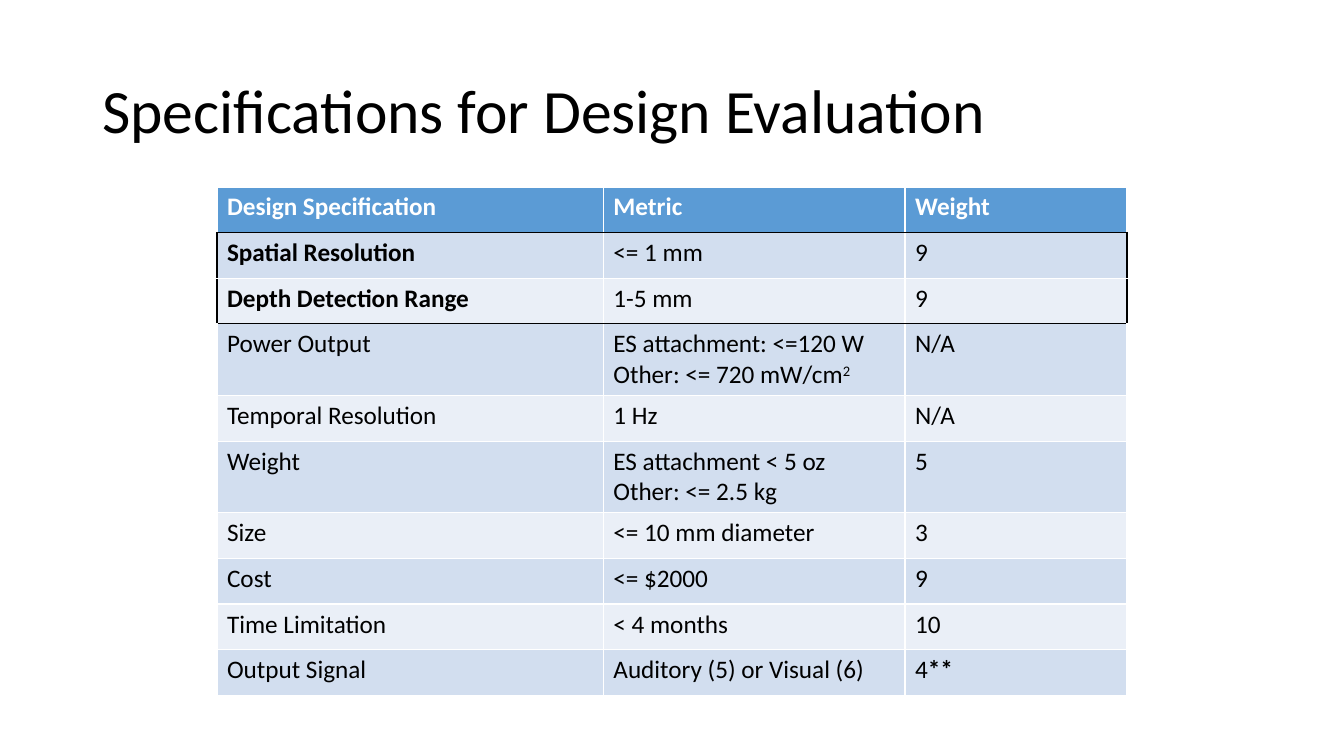
from lxml.etree import SubElement
from pptx import Presentation
from pptx.dml.color import RGBColor
from pptx.enum.text import MSO_ANCHOR
from pptx.oxml.ns import qn
from pptx.util import Pt

TITLE = "Specifications for Design Evaluation"
HEADER = ("Design Specification", "Metric", "Weight")
# A cell is a tuple of lines, a line is a tuple of (text, style) runs;
# a plain string stands for one line of one plain run.
ROWS = [
    (((("Spatial Resolution", "bold"),),), "<= 1 mm", "9"),
    (((("Depth Detection Range", "bold"),),), "1-5 mm", "9"),
    ("Power Output",
     ("ES attachment: <=120 W", (("Other: <= 720 mW/cm", ""), ("2", "super"))),
     "N/A"),
    ("Temporal Resolution", "1 Hz", "N/A"),
    ("Weight", ("ES attachment < 5 oz", "Other: <= 2.5 kg"), "5"),
    ("Size", "<= 10 mm diameter", "3"),
    ("Cost", "<= $2000", "9"),
    ("Time Limitation", "< 4 months", "10"),
    ("Output Signal", "Auditory (5) or Visual (6)", ((("4", ""), ("**", "bold")),)),
]
BOXED_ROWS = (1, 2)  # first and last table row inside the black outline

THEME = {
    "font": "Calibri", "title_size": 44, "cell_size": 18,
    "text": "000000", "header_text": "FFFFFF", "header_fill": "5B9BD5",
    "bands": ("D2DEEF", "EAEFF7"), "grid": "FFFFFF", "outline": "000000",
}
SLIDE_SIZE = (960, 540)
TITLE_BOX = (66, 28.8, 828, 104.4)
TABLE_LEFT, TABLE_TOP = 155, 133.5
COLUMN_WIDTHS = (276, 215.5, 158.5)
ROW_HEIGHT, LINE_HEIGHT = 32.6, 18.6


def add_run(p, text, size, color, style=""):
    r = p.add_run()
    r.text = text
    r.font.name = THEME["font"]
    r.font.size = Pt(size)
    r.font.bold = style == "bold"
    r.font.color.rgb = RGBColor.from_string(color)
    if style == "super":
        r.font._element.set("baseline", "30000")


def fill_cell(cell, content, fill, color, style=""):
    cell.fill.solid()
    cell.fill.fore_color.rgb = RGBColor.from_string(fill)
    tf = cell.text_frame
    lines = (content,) if isinstance(content, str) else content
    for i, line in enumerate(lines):
        p = tf.add_paragraph() if i else tf.paragraphs[0]
        runs = ((line, style),) if isinstance(line, str) else line
        for text, run_style in runs:
            add_run(p, text, THEME["cell_size"], color, run_style)


def set_borders(cell, row, col):
    """Draw the white grid, with a black outline around the boxed rows."""
    first, last = BOXED_ROWS
    boxed = first <= row <= last
    black = {
        "lnL": boxed and col == 0,
        "lnR": boxed and col == len(HEADER) - 1,
        "lnT": row in (first, last + 1),
        "lnB": row in (first - 1, last),
    }
    tcPr = cell._tc.get_or_add_tcPr()
    for i, (side, is_black) in enumerate(black.items()):
        ln = tcPr.makeelement(qn(f"a:{side}"), {"w": str(Pt(1))})
        solid = SubElement(ln, qn("a:solidFill"))
        color = THEME["outline" if is_black else "grid"]
        SubElement(solid, qn("a:srgbClr"), val=color)
        tcPr.insert(i, ln)


def line_count(row):
    return max(1 if isinstance(c, str) else len(c) for c in row)


def add_title(s):
    tf = s.shapes.add_textbox(*map(Pt, TITLE_BOX)).text_frame
    tf.word_wrap = True
    tf.vertical_anchor = MSO_ANCHOR.MIDDLE
    p = tf.paragraphs[0]
    p.line_spacing = 0.9
    add_run(p, TITLE, THEME["title_size"], THEME["text"])


def add_spec_table(s):
    rows = [HEADER, *ROWS]
    heights = [ROW_HEIGHT + LINE_HEIGHT * (line_count(row) - 1) for row in rows]
    table = s.shapes.add_table(
        len(rows), len(HEADER), Pt(TABLE_LEFT), Pt(TABLE_TOP),
        Pt(sum(COLUMN_WIDTHS)), Pt(sum(heights))).table
    for column, width in zip(table.columns, COLUMN_WIDTHS):
        column.width = Pt(width)
    for i, row in enumerate(rows):
        table.rows[i].height = Pt(heights[i])
        for j, content in enumerate(row):
            cell = table.cell(i, j)
            if i == 0:
                fill_cell(cell, content, THEME["header_fill"],
                          THEME["header_text"], "bold")
            else:
                fill_cell(cell, content, THEME["bands"][(i - 1) % 2], THEME["text"])
            set_borders(cell, i, j)


def main():
    prs = Presentation()
    prs.slide_width, prs.slide_height = map(Pt, SLIDE_SIZE)
    s = prs.slides.add_slide(prs.slide_layouts[6])
    add_title(s)
    add_spec_table(s)
    prs.save("out.pptx")


if __name__ == "__main__":
    main()
